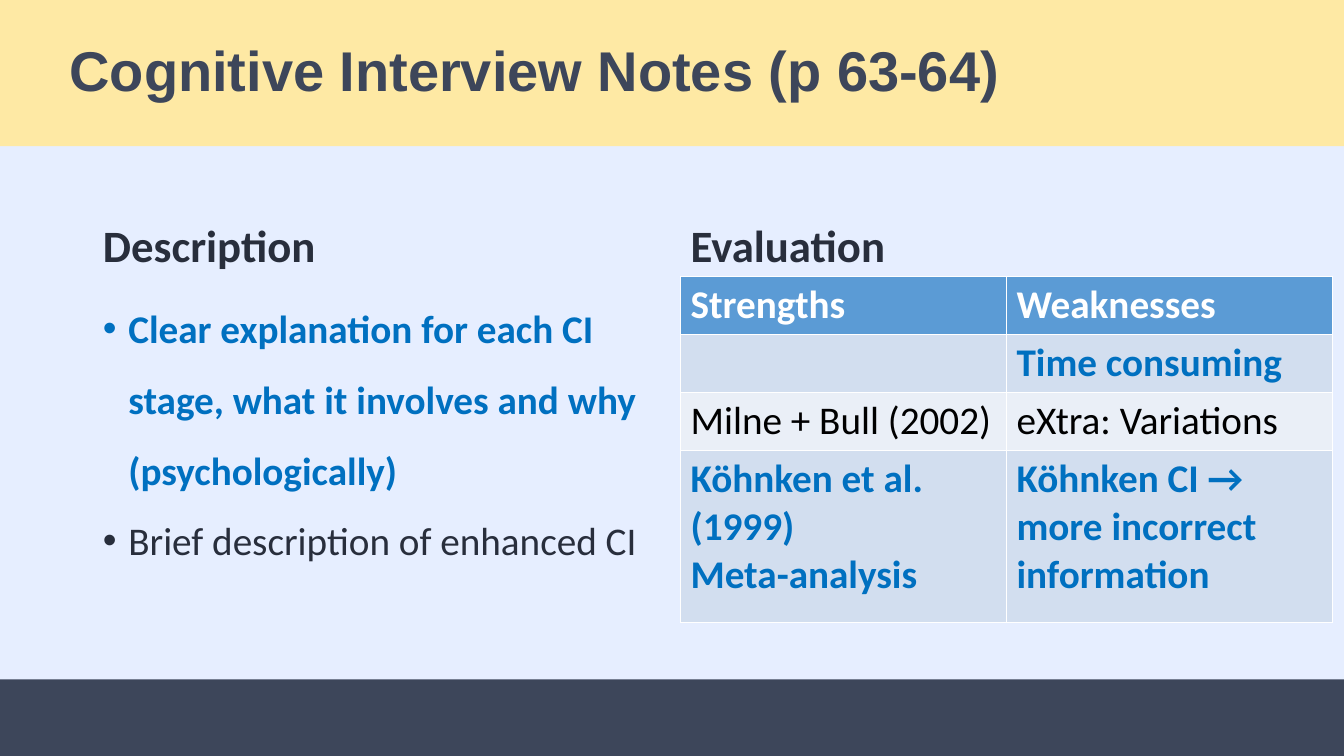
from lxml import etree
from pptx import Presentation
from pptx import util as u
from pptx.dml.color import RGBColor
from pptx.enum import shapes, text
from pptx.oxml.ns import qn

PALE_BLUE = RGBColor(0xE6, 0xEE, 0xFF)
CREAM = RGBColor(0xFE, 0xE9, 0xA4)
SLATE = RGBColor(0x3D, 0x46, 0x5A)
INK = RGBColor(0x28, 0x2E, 0x3C)
BLUE = RGBColor(0x00, 0x70, 0xC0)
WHITE = RGBColor(0xFF, 0xFF, 0xFF)
BLACK = RGBColor(0x00, 0x00, 0x00)
HEADER_FILL = RGBColor(0x5B, 0x9B, 0xD5)
DARK_BAND = RGBColor(0xD2, 0xDE, 0xEF)
LIGHT_BAND = RGBColor(0xEA, 0xEF, 0xF7)

SLIDE_WIDTH, SLIDE_HEIGHT = 33.87, 19.05
LEFT, RIGHT = 2.34, 17.15
HEADING_TOP, HEADING_HEIGHT = 4.67, 2.29
CONTENT_TOP = HEADING_TOP + HEADING_HEIGHT

BULLETS = [
    ("Clear explanation for each CI stage, what it involves and why (psychologically)", BLUE, True),
    ("Brief description of enhanced CI", INK, False),
]
# Row height, fill, text colour, bold, and the lines of each cell
TABLE_ROWS = [
    (1.35, HEADER_FILL, WHITE, True, [["Strengths"], ["Weaknesses"]]),
    (1.35, DARK_BAND, BLUE, True, [[], ["Time consuming"]]),
    (1.45, LIGHT_BAND, BLACK, False, [["Milne + Bull (2002)"], ["eXtra: Variations"]]),
    (4.34, DARK_BAND, BLUE, True, [["Köhnken et al. (1999)", "Meta-analysis"],
                                   ["Köhnken CI → more incorrect information"]]),
]


def place(shape, box):
    shape.left, shape.top, shape.width, shape.height = (u.Cm(length) for length in box)


def add_run(paragraph, wording, size, color, bold=True, font="Calibri"):
    run = paragraph.add_run()
    run.text = wording
    run.font.name, run.font.size, run.font.bold = font, u.Pt(size), bold
    run.font.color.rgb = color


def set_indent(paragraph, margin, first_line, bullet=None):
    properties = paragraph._p.get_or_add_pPr()
    properties.set("marL", str(u.Cm(margin)))
    properties.set("indent", str(u.Cm(first_line)))
    if bullet:
        etree.SubElement(properties, qn("a:buChar"), char=bullet)


def next_paragraph(frame, index):
    return frame.add_paragraph() if index else frame.paragraphs[0]


def format_frame(shape, anchor):
    frame = shape.text_frame
    frame.word_wrap = True
    frame.auto_size = text.MSO_AUTO_SIZE.NONE
    frame.vertical_anchor = anchor
    return frame


def fill_title(title, box):
    place(title, box)
    title.fill.solid()
    title.fill.fore_color.rgb = CREAM
    paragraph = format_frame(title, text.MSO_ANCHOR.MIDDLE).paragraphs[0]
    set_indent(paragraph, 1.5, 0)
    paragraph.alignment = text.PP_ALIGN.LEFT
    paragraph.line_spacing = 0.9
    add_run(paragraph, "Cognitive Interview Notes (p 63-64)", 40, SLATE, font="Arial")


def fill_heading(placeholder, box, wording):
    place(placeholder, box)
    paragraph = format_frame(placeholder, text.MSO_ANCHOR.BOTTOM).paragraphs[0]
    paragraph.line_spacing = 1.5
    paragraph.space_before = u.Pt(0)
    add_run(paragraph, wording, 32, INK)


def fill_bullets(placeholder, box):
    place(placeholder, box)
    frame = format_frame(placeholder, text.MSO_ANCHOR.TOP)
    for index, (wording, color, bold) in enumerate(BULLETS):
        paragraph = next_paragraph(frame, index)
        set_indent(paragraph, 0.64, -0.64, "•")
        paragraph.line_spacing = 1.5
        paragraph.space_before = u.Pt(0)
        add_run(paragraph, wording, 28, color, bold)


def add_evaluation_table(slide, box):
    lengths = [u.Cm(length) for length in box]
    table = slide.shapes.add_table(len(TABLE_ROWS), 2, *lengths).table
    for row, (height, fill, color, bold, cells) in zip(table.rows, TABLE_ROWS):
        row.height = u.Cm(height)
        for cell, lines in zip(row.cells, cells):
            cell.fill.solid()
            cell.fill.fore_color.rgb = fill
            for index, line in enumerate(lines):
                add_run(next_paragraph(cell.text_frame, index), line, 28, color, bold)


def add_footer_bar(slide, box):
    bar = slide.shapes.add_shape(shapes.MSO_SHAPE.RECTANGLE, *(u.Cm(length) for length in box))
    bar.shadow.inherit = False
    bar.fill.solid()
    bar.fill.fore_color.rgb = SLATE
    bar.line.fill.background()


def build_comparison_slide(presentation):
    slide = presentation.slides.add_slide(presentation.slide_layouts[4])
    slide.background.fill.solid()
    slide.background.fill.fore_color.rgb = PALE_BLUE
    title, left_heading, left_body, right_heading, right_body = slide.placeholders
    right_body.element.getparent().remove(right_body.element)

    fill_title(title, (0, 0, SLIDE_WIDTH, 3.68))
    fill_heading(left_heading, (LEFT, HEADING_TOP, 14.33, HEADING_HEIGHT), "Description")
    fill_bullets(left_body, (LEFT, CONTENT_TOP, 14.33, 10.16))
    fill_heading(right_heading, (RIGHT, HEADING_TOP, 14.4, HEADING_HEIGHT), "Evaluation")
    table_height = sum(row[0] for row in TABLE_ROWS)
    add_evaluation_table(slide, (RIGHT, CONTENT_TOP, 16.43, table_height))
    add_footer_bar(slide, (0, 17.12, SLIDE_WIDTH, SLIDE_HEIGHT - 17.12))


def main():
    presentation = Presentation()
    presentation.slide_width = u.Cm(SLIDE_WIDTH)
    presentation.slide_height = u.Cm(SLIDE_HEIGHT)
    build_comparison_slide(presentation)
    presentation.save("out.pptx")


if __name__ == "__main__":
    main()
